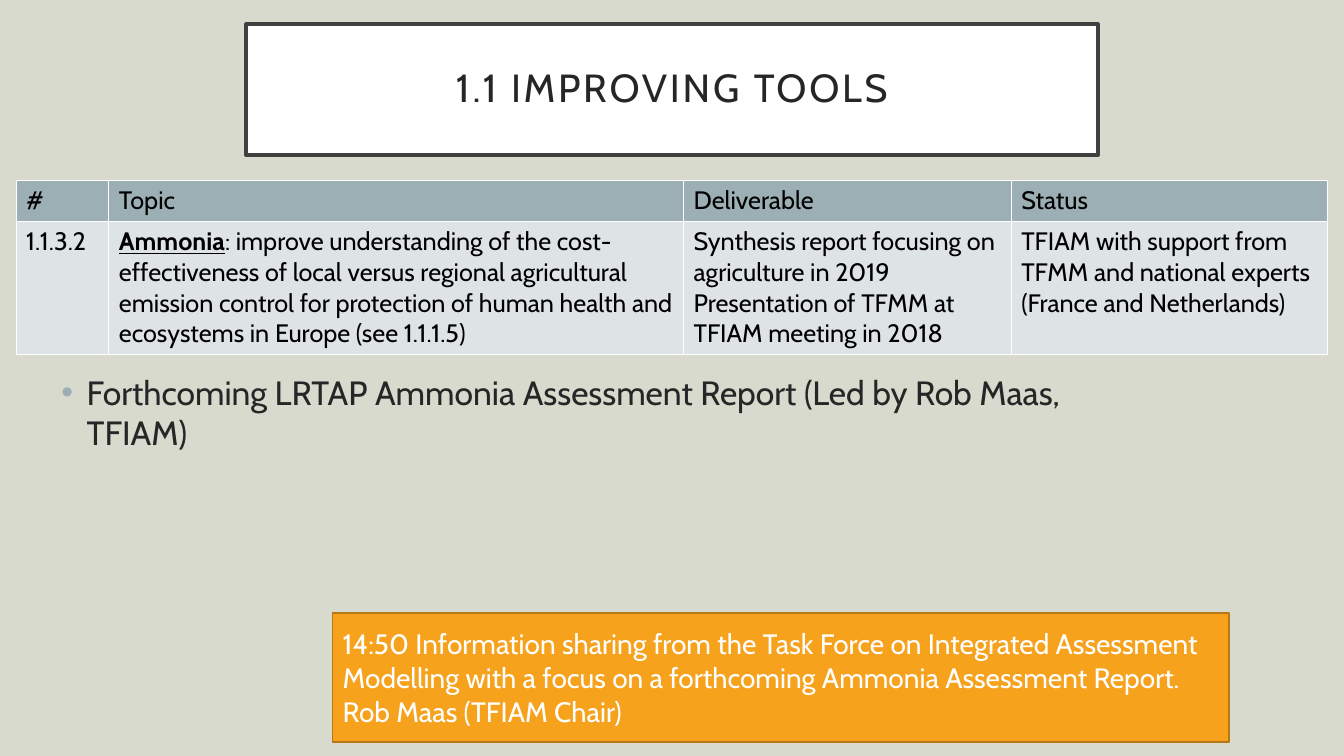
from pptx import Presentation, util as u
from pptx.dml.color import RGBColor
from pptx.enum import shapes, text
from pptx.oxml import parse_xml
from pptx.oxml.ns import nsdecls

INK, WHITE, BLACK = "262626", "FFFFFF", "000000"
SLATE, PALE, ORANGE = "9BAFB5", "DEE3E5", "F6A21D"


def colour(value):
    return RGBColor.from_string(value)


def place(shape, box):
    shape.left, shape.top, shape.width, shape.height = map(u.Inches, box)


class SlideBuilder:
    font = "Cabin"

    def __init__(self, deck, background):
        self.slide = deck.slides.add_slide(deck.slide_layouts[1])
        self.slide.background.fill.solid()
        self.slide.background.fill.fore_color.rgb = colour(background)

    def format_runs(self, paragraph, size, ink):
        for run in paragraph.runs:
            run.font.name = self.font
            run.font.size = u.Pt(size)
            run.font.color.rgb = colour(ink)

    def paint(self, shape, fill, line, width):
        shape.fill.solid()
        shape.fill.fore_color.rgb = colour(fill)
        shape.line.color.rgb = colour(line)
        shape.line.width = u.Pt(width)

    def title(self, wording, box):
        heading = self.slide.shapes.title
        place(heading, box)
        self.paint(heading, WHITE, "404040", 2.5)
        frame = heading.text_frame
        frame.text = wording
        frame.auto_size = text.MSO_AUTO_SIZE.NONE
        frame.vertical_anchor = text.MSO_ANCHOR.MIDDLE
        frame.margin_left = frame.margin_right = u.Inches(0.2)
        frame.margin_top = frame.margin_bottom = u.Inches(0.2)
        paragraph = frame.paragraphs[0]
        paragraph.alignment = text.PP_ALIGN.CENTER
        paragraph.line_spacing = 0.9
        self.format_runs(paragraph, 28, INK)
        for run in paragraph.runs:
            run.font._element.set("spc", "200")

    def bullets(self, items, box):
        body = self.slide.placeholders[1]
        place(body, box)
        frame = body.text_frame
        frame.text = "\n".join(items)
        frame.auto_size = text.MSO_AUTO_SIZE.NONE
        for paragraph in frame.paragraphs:
            paragraph.space_before = u.Pt(10)
            paragraph.line_spacing = 1.0
            self.format_runs(paragraph, 24, INK)
            properties = paragraph._p.get_or_add_pPr()
            properties.set("marL", str(u.Inches(0.25)))
            properties.set("indent", str(-u.Inches(0.25)))
            for bullet in (f'<a:buClr {nsdecls("a")}><a:srgbClr val="{SLATE}"/></a:buClr>',
                           f'<a:buFont {nsdecls("a")} typeface="Arial"/>',
                           f'<a:buChar {nsdecls("a")} char="•"/>'):
                properties.append(parse_xml(bullet))

    def border(self, cell, line):
        properties = cell._tc.get_or_add_tcPr()
        for side in "LRTB":
            properties.append(parse_xml(
                f'<a:ln{side} {nsdecls("a")} w="{u.Pt(1)}"><a:solidFill>'
                f'<a:srgbClr val="{line}"/></a:solidFill></a:ln{side}>'))

    def table(self, rows, box, widths, heights):
        grid = self.slide.shapes.add_table(
            len(rows), len(widths), *map(u.Inches, box)).table
        for column, width in zip(grid.columns, widths):
            column.width = u.Inches(width)
        for row, height, wordings, fill in zip(grid.rows, heights, rows, (SLATE, PALE)):
            row.height = u.Inches(height)
            for cell, wording in zip(row.cells, wordings):
                self.border(cell, WHITE)
                cell.fill.solid()
                cell.fill.fore_color.rgb = colour(fill)
                cell.text_frame.text = wording
                for paragraph in cell.text_frame.paragraphs:
                    self.format_runs(paragraph, 18, BLACK)
                    for run in paragraph.runs:
                        run.font.bold = False
        return grid

    def emphasise_start(self, paragraph, keyword):
        """Split off the leading keyword as a bold, underlined run."""
        lead = paragraph.runs[0]
        rest = paragraph.add_run()
        rest.text = lead.text[len(keyword):]
        lead.text = keyword
        self.format_runs(paragraph, 18, BLACK)
        lead.font.bold = lead.font.underline = True
        rest.font.bold = rest.font.underline = False

    def callout(self, wording, box):
        agenda = self.slide.shapes.add_shape(
            shapes.MSO_SHAPE.RECTANGLE, *map(u.Inches, box))
        agenda.shadow.inherit = False
        self.paint(agenda, ORANGE, "B67815", 1)
        frame = agenda.text_frame
        frame.text = wording
        frame.word_wrap = True
        frame.vertical_anchor = text.MSO_ANCHOR.MIDDLE
        frame.paragraphs[0].alignment = text.PP_ALIGN.LEFT
        self.format_runs(frame.paragraphs[0], 20, WHITE)


def main():
    deck = Presentation()
    deck.slide_width, deck.slide_height = u.Inches(13.33), u.Inches(7.5)
    builder = SlideBuilder(deck, "D7DACD")
    builder.title("1.1 IMPROVING TOOLS", (2.44, 0.24, 8.45, 1.3))
    workplan = builder.table(
        [("#", "Topic", "Deliverable", "Status"),
         ("1.1.3.2",
          "Ammonia: improve understanding of the cost-effectiveness of local versus "
          "regional agricultural emission control for protection of human health and "
          "ecosystems in Europe (see 1.1.1.5)",
          "Synthesis report focusing on agriculture in 2019\n"
          "Presentation of TFMM at TFIAM meeting in 2018",
          "TFIAM with support from TFMM and national experts (France and Netherlands)")],
        (0.16, 1.79, 13.01, 1.72), (0.92, 5.7, 3.25, 3.14), (0.4, 1.32))
    builder.emphasise_start(workplan.cell(1, 1).text_frame.paragraphs[0], "Ammonia")
    builder.bullets(
        ["Forthcoming LRTAP Ammonia Assessment Report (Led by Rob Maas, TFIAM)"],
        (0.51, 3.64, 10.94, 1.7))
    builder.callout(
        "14:50 Information sharing from the Task Force on Integrated Assessment "
        "Modelling with a focus on a forthcoming Ammonia Assessment Report. "
        "Rob Maas (TFIAM Chair)", (3.3, 6.08, 8.89, 1.28))
    deck.save("out.pptx")


if __name__ == "__main__":
    main()
